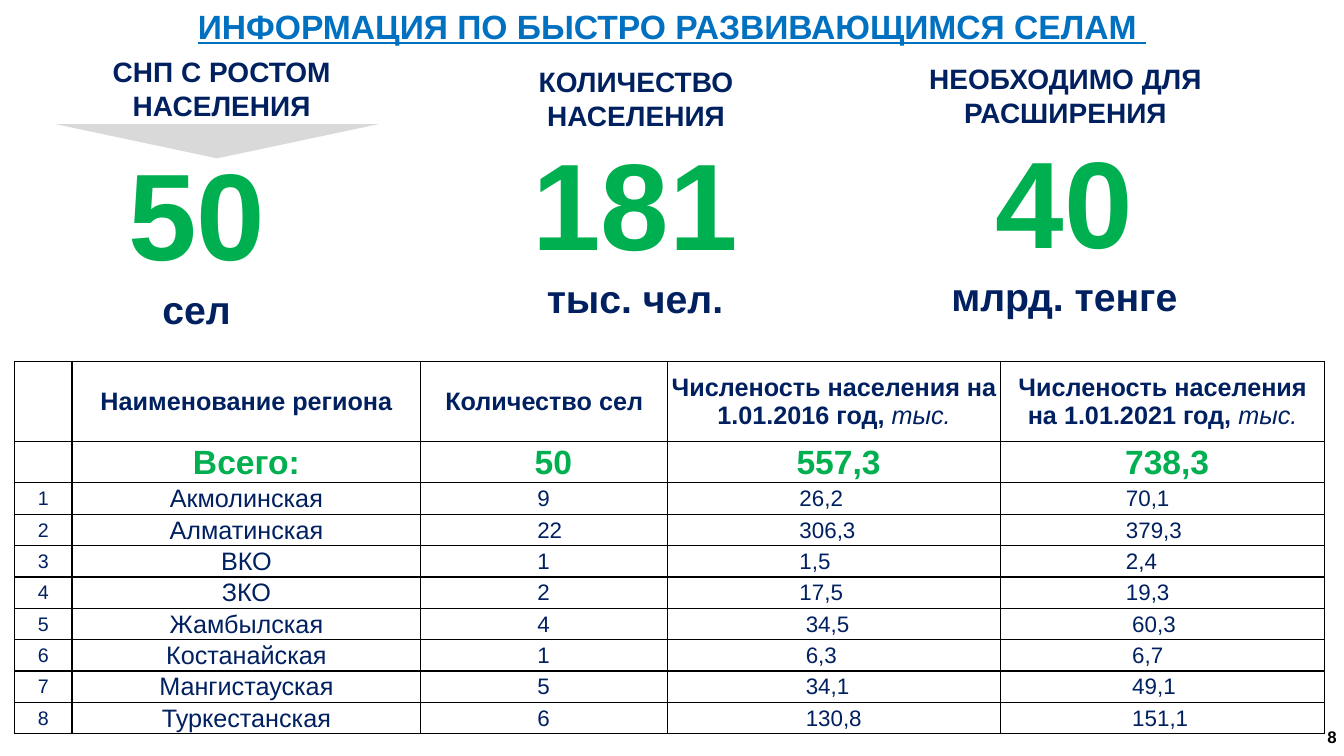
import pptx
import pptx.dml.color
import pptx.enum.shapes
import pptx.enum.text
import pptx.util
from lxml import etree
from pptx.oxml.ns import qn

Pt = pptx.util.Pt
ALIGN = pptx.enum.text.PP_ALIGN
ANCHOR = pptx.enum.text.MSO_ANCHOR
SHAPE = pptx.enum.shapes.MSO_SHAPE


def rgb(value):
    return pptx.dml.color.RGBColor.from_string(value)


class SlideBuilder:
    font = "Arial"
    navy, green, blue = "002060", "00B050", "0070C0"
    white, black, grey = "FFFFFF", "000000", "D9D9D9"

    def __init__(self, prs):
        self.s = prs.slides.add_slide(prs.slide_layouts[5])

    def style(self, p, size, color, bold=True, align=ALIGN.CENTER, left=0, right=0):
        """Format a paragraph; left and right are its indents."""
        p.alignment = align
        pPr = p._p.get_or_add_pPr()
        for name, indent in (("marL", left), ("marR", right)):
            if indent:
                pPr.set(name, str(Pt(indent)))
        p.font.name = self.font
        p.font.size = Pt(size)
        p.font.bold = bold
        p.font.color.rgb = rgb(color)

    def title(self, text, x, y, w, h):
        sp = self.s.shapes.title
        sp.left, sp.top, sp.width, sp.height = Pt(x), Pt(y), Pt(w), Pt(h)
        sp.fill.solid()
        sp.fill.fore_color.rgb = rgb(self.white)
        tf = sp.text_frame
        tf.auto_size = pptx.enum.text.MSO_AUTO_SIZE.NONE
        tf.vertical_anchor = ANCHOR.MIDDLE
        tf.text = text
        self.style(tf.paragraphs[0], 24, self.blue)
        tf.paragraphs[0].font.underline = True

    def text(self, x, y, w, h, lines, inset=(7.2, 3.6), wrap=True):
        """Add a text box; lines are (text, style arguments) pairs."""
        tf = self.s.shapes.add_textbox(Pt(x), Pt(y), Pt(w), Pt(h)).text_frame
        tf.word_wrap = wrap
        tf.margin_left = tf.margin_right = Pt(inset[0])
        tf.margin_top = tf.margin_bottom = Pt(inset[1])
        for i, (line, style) in enumerate(lines):
            p = tf.add_paragraph() if i else tf.paragraphs[0]
            p.text = line
            self.style(p, **style)

    def label(self, x, y, *lines):
        style = dict(size=20, color=self.navy)
        self.text(x, y, 296.6, 54, [(line, style) for line in lines], (5, 2.9))

    def figure(self, x, y, number, unit):
        self.text(x, y, 248.4, 147.6, [
            (number, dict(size=88, color=self.green, right=15.3)),
            (unit, dict(size=28, color=self.navy)),
        ])

    def triangle(self, x, y, w, h):
        sp = self.s.shapes.add_shape(
            SHAPE.ISOSCELES_TRIANGLE, Pt(x), Pt(y), Pt(w), Pt(h))
        sp.rotation = 180
        sp.shadow.inherit = False
        sp.fill.solid()
        sp.fill.fore_color.rgb = rgb(self.grey)
        sp.line.fill.background()

    def table(self, x, y, widths, heights):
        """Add an empty table with black borders and white cells."""
        table = self.s.shapes.add_table(
            len(heights), len(widths), Pt(x), Pt(y),
            Pt(sum(widths)), Pt(sum(heights))).table
        for column, width in zip(table.columns, widths):
            column.width = Pt(width)
        for row, height in zip(table.rows, heights):
            row.height = Pt(height)
        for cell in table.iter_cells():
            cell.margin_left = cell.margin_right = cell.margin_top = Pt(0.72)
            cell.margin_bottom = 0
            cell.vertical_anchor = ANCHOR.MIDDLE
            tcPr = cell._tc.get_or_add_tcPr()
            for side in ("a:lnL", "a:lnR", "a:lnT", "a:lnB"):
                ln = etree.SubElement(tcPr, qn(side), w=str(Pt(1)))
                fill = etree.SubElement(ln, qn("a:solidFill"))
                etree.SubElement(fill, qn("a:srgbClr"), val=self.black)
            cell.fill.solid()
            cell.fill.fore_color.rgb = rgb(self.white)
        return table

    def cell(self, cell, text, unit="", **style):
        """Fill a table cell; unit follows the text in plain italics."""
        p = cell.text_frame.paragraphs[0]
        p.add_run().text = text
        if unit:
            r = p.add_run()
            r.text = unit
            r.font.bold = False
            r.font.italic = True
        self.style(p, **style)


HEADERS = [
    ("Наименование региона", ""),
    ("Количество сел", ""),
    ("Численость населения на 1.01.2016 год, ", "тыс."),
    ("Численость населения на 1.01.2021 год, ", "тыс."),
]
# Text and left indent
TOTALS = [("Всего:", 0), ("50", 13), ("557,3", 6.5), ("738,3", 6.5)]
REGIONS = [
    ("Акмолинская", "9", "26,2", "70,1"),
    ("Алматинская", "22", "306,3", "379,3"),
    ("ВКО", "1", "1,5", "2,4"),
    ("ЗКО", "2", "17,5", "19,3"),
    ("Жамбылская", "4", "34,5", "60,3"),
    ("Костанайская", "1", "6,3", "6,7"),
    ("Мангистауская", "5", "34,1", "49,1"),
    ("Туркестанская", "6", "130,8", "151,1"),
]


def main():
    prs = pptx.Presentation()
    prs.slide_width, prs.slide_height = Pt(960), Pt(540)
    b = SlideBuilder(prs)

    b.title("ИНФОРМАЦИЯ ПО БЫСТРО РАЗВИВАЮЩИМСЯ СЕЛАМ ", 0, 0, 960, 37.4)
    b.label(10, 36, "СНП С РОСТОМ НАСЕЛЕНИЯ")
    b.triangle(39.6, 88.6, 231, 24.5)
    b.figure(23.8, 94.3, "50", "сел")
    b.label(306, 43.2, "КОЛИЧЕСТВО", "НАСЕЛЕНИЯ")
    b.figure(337, 87.1, "181", "тыс. чел.")
    b.label(612.7, 41, "НЕОБХОДИМО ДЛЯ РАСШИРЕНИЯ")
    b.figure(643.7, 85.7, "40", "млрд. тенге")

    table = b.table(10.5, 258, [41, 249.1, 176.4, 237.6, 231.8],
                    [57.4, 29.2] + [22.4] * len(REGIONS))
    for col, (text, unit) in enumerate(HEADERS, 1):
        b.cell(table.cell(0, col), text, unit, size=18, color=b.navy)
    for col, (text, left) in enumerate(TOTALS, 1):
        b.cell(table.cell(1, col), text, size=24, color=b.green, left=left)
    for number, (region, *values) in enumerate(REGIONS, 1):
        row = number + 1
        plain = dict(color=b.navy, bold=False)
        b.cell(table.cell(row, 0), str(number), size=14, **plain)
        b.cell(table.cell(row, 1), region, size=18, **plain)
        shift = 4.5 if number > 4 else 0
        indents = (82.5, 93.4 + shift, 89 + shift)
        for col, (value, left) in enumerate(zip(values, indents), 2):
            b.cell(table.cell(row, col), value, size=16,
                   align=ALIGN.LEFT, left=left, **plain)

    b.text(941, 515.5, 20.9, 21.6,
           [("8", dict(size=12, color=b.black, align=ALIGN.LEFT))], wrap=False)
    prs.save("out.pptx")


if __name__ == "__main__":
    main()
